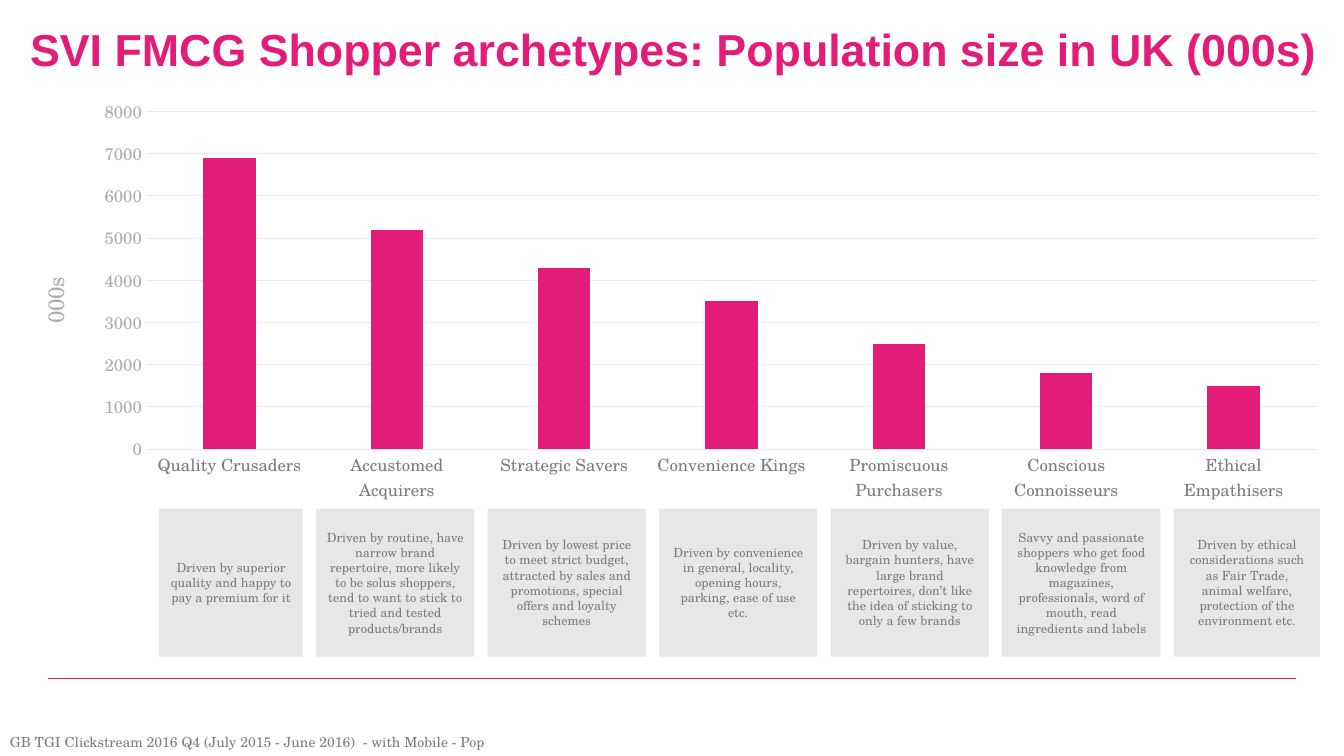
import pptx
import pptx.chart.data
import pptx.dml.color
import pptx.enum.chart
import pptx.enum.shapes
import pptx.enum.text
import pptx.oxml
import pptx.util
from pptx.oxml.ns import nsdecls

Pt = pptx.util.Pt
SERIF = "TeX Gyre Schola"
COLORS = {"pink": "E31C79", "text": "7A7D81", "axis": "A8AAAD",
          "grid": "EBEBEC", "panel": "E7E7E7"}

# Archetype, population in thousands, description
ARCHETYPES = [
    ("Quality Crusaders", 6900,
     "Driven by superior quality and happy to pay a premium for it"),
    ("Accustomed Acquirers", 5200,
     "Driven by routine, have narrow brand repertoire, more likely to be solus "
     "shoppers, tend to want to stick to tried and tested products/brands"),
    ("Strategic Savers", 4300,
     "Driven by lowest price to meet strict budget, attracted by sales and "
     "promotions, special offers and loyalty schemes"),
    ("Convenience Kings", 3500,
     "Driven by convenience in general, locality, opening hours, parking, "
     "ease of use etc."),
    ("Promiscuous Purchasers", 2500,
     "Driven by value, bargain hunters, have large brand repertoires, don’t "
     "like the idea of sticking to only a few brands"),
    ("Conscious Connoisseurs", 1800,
     "Savvy and passionate shoppers who get food knowledge from magazines, "
     "professionals, word of mouth, read ingredients and labels"),
    ("Ethical Empathisers", 1500,
     "Driven by ethical considerations such as Fair Trade, animal welfare, "
     "protection of the environment etc."),
]


def rgb(name):
    return pptx.dml.color.RGBColor.from_string(COLORS[name])


def style_font(font, size, color, name=SERIF, bold=False):
    font.size, font.name, font.bold = Pt(size), name, bold
    font.color.rgb = rgb(color)


def add_text(s, box, text, size, color, name=SERIF, bold=False, spacing=None):
    tf = s.shapes.add_textbox(*map(Pt, box)).text_frame
    tf.word_wrap = True
    p = tf.paragraphs[0]
    p.line_spacing = spacing
    r = p.add_run()
    r.text = text
    style_font(r.font, size, color, name, bold)


def add_rule(s, x1, x2, y):
    line = s.shapes.add_connector(pptx.enum.shapes.MSO_CONNECTOR.STRAIGHT,
                                  Pt(x1), Pt(y), Pt(x2), Pt(y))
    line.line.color.rgb = rgb("pink")
    line.line.width = Pt(1)
    line._element.spPr.append(
        pptx.oxml.parse_xml(f"<a:effectLst {nsdecls('a')}/>"))


def set_plot_layout(chart, x, y, w, h):
    plot_area = chart._chartSpace.chart.plotArea
    for old in plot_area.findall(pptx.oxml.ns.qn("c:layout")):
        plot_area.remove(old)
    sizes = "".join(f'<c:{tag} val="{val}"/>'
                    for tag, val in zip("xywh", (x, y, w, h)))
    plot_area.insert(0, pptx.oxml.parse_xml(
        f'<c:layout {nsdecls("c")}><c:manualLayout>'
        '<c:layoutTarget val="inner"/><c:xMode val="edge"/>'
        f'<c:yMode val="edge"/>{sizes}</c:manualLayout></c:layout>'))


def add_population_chart(s, box):
    data = pptx.chart.data.CategoryChartData(number_format="0")
    data.categories = [name for name, _, _ in ARCHETYPES]
    data.add_series("000s", [size for _, size, _ in ARCHETYPES])
    chart = s.shapes.add_chart(
        pptx.enum.chart.XL_CHART_TYPE.COLUMN_CLUSTERED,
        *map(Pt, box), data).chart
    chart.has_title = chart.has_legend = False
    style_font(chart.font, 10, "text")
    set_plot_layout(chart, 0.095, 0.034, 0.885, 0.55)

    # Columns
    plot = chart.plots[0]
    plot.vary_by_categories = False
    plot.gap_width, plot.overlap = 219, -27
    fill = plot.series[0].format.fill
    fill.solid()
    fill.fore_color.rgb = rgb("pink")

    # Axes
    cat, val = chart.category_axis, chart.value_axis
    for axis, color in ((cat, "text"), (val, "axis")):
        axis.major_tick_mark = pptx.enum.chart.XL_TICK_MARK.NONE
        axis.minor_tick_mark = pptx.enum.chart.XL_TICK_MARK.NONE
        style_font(axis.tick_labels.font, 12, color)
    val.minimum_scale, val.maximum_scale, val.major_unit = 0, 8000, 1000
    val.has_major_gridlines = True
    val.format.line.fill.background()
    for line in (cat.format.line, val.major_gridlines.format.line):
        line.color.rgb = rgb("grid")
        line.width = Pt(0.75)

    # Value axis title
    tf = val.axis_title.text_frame
    tf._txBody.bodyPr.set("rot", "-5400000")
    tf._txBody.bodyPr.set("vert", "horz")
    r = tf.paragraphs[0].add_run()
    r.text = "000s"
    style_font(r.font, 16, "axis")


def add_descriptions(s, box):
    # Equal columns; the outer two are trimmed to the edges of the box
    left, top, width, height = box
    pitch, panel_w, trim = 122.6, 113, 10.5
    for i, (_, _, text) in enumerate(ARCHETYPES):
        x = left - trim + i * pitch
        x1, x2 = max(x, left), min(x + panel_w, left + width)
        sp = s.shapes.add_shape(pptx.enum.shapes.MSO_SHAPE.RECTANGLE,
                                Pt(x1), Pt(top), Pt(x2 - x1), Pt(height))
        sp.shadow.inherit = False
        sp.fill.solid()
        sp.fill.fore_color.rgb = rgb("panel")
        sp.line.fill.background()
        tf = sp.text_frame
        tf.word_wrap = True
        tf.vertical_anchor = pptx.enum.text.MSO_ANCHOR.MIDDLE
        p = tf.paragraphs[0]
        p.alignment = pptx.enum.text.PP_ALIGN.CENTER
        r = p.add_run()
        r.text = text
        style_font(r.font, 9, "text")


def main():
    prs = pptx.Presentation()
    prs.slide_width, prs.slide_height = Pt(960.5), Pt(540)
    s = prs.slides.add_slide(prs.slide_layouts[6])

    add_rule(s, 34.5, 926.5, 484.5)
    add_text(s, (14.4, 16.5, 960.5, 48),
             "SVI FMCG Shopper archetypes: Population size in UK (000s)",
             32, "pink", "Arial", True, 0.9)
    add_population_chart(s, (14.4, 64.8, 946, 438.5))
    add_descriptions(s, (113.8, 363.3, 829.5, 105.8))
    add_text(s, (0, 520.5, 480, 19.5),
             "GB TGI Clickstream 2016 Q4 (July 2015 - June 2016)  - with Mobile - Pop",
             10, "text")
    prs.save("out.pptx")


if __name__ == "__main__":
    main()
